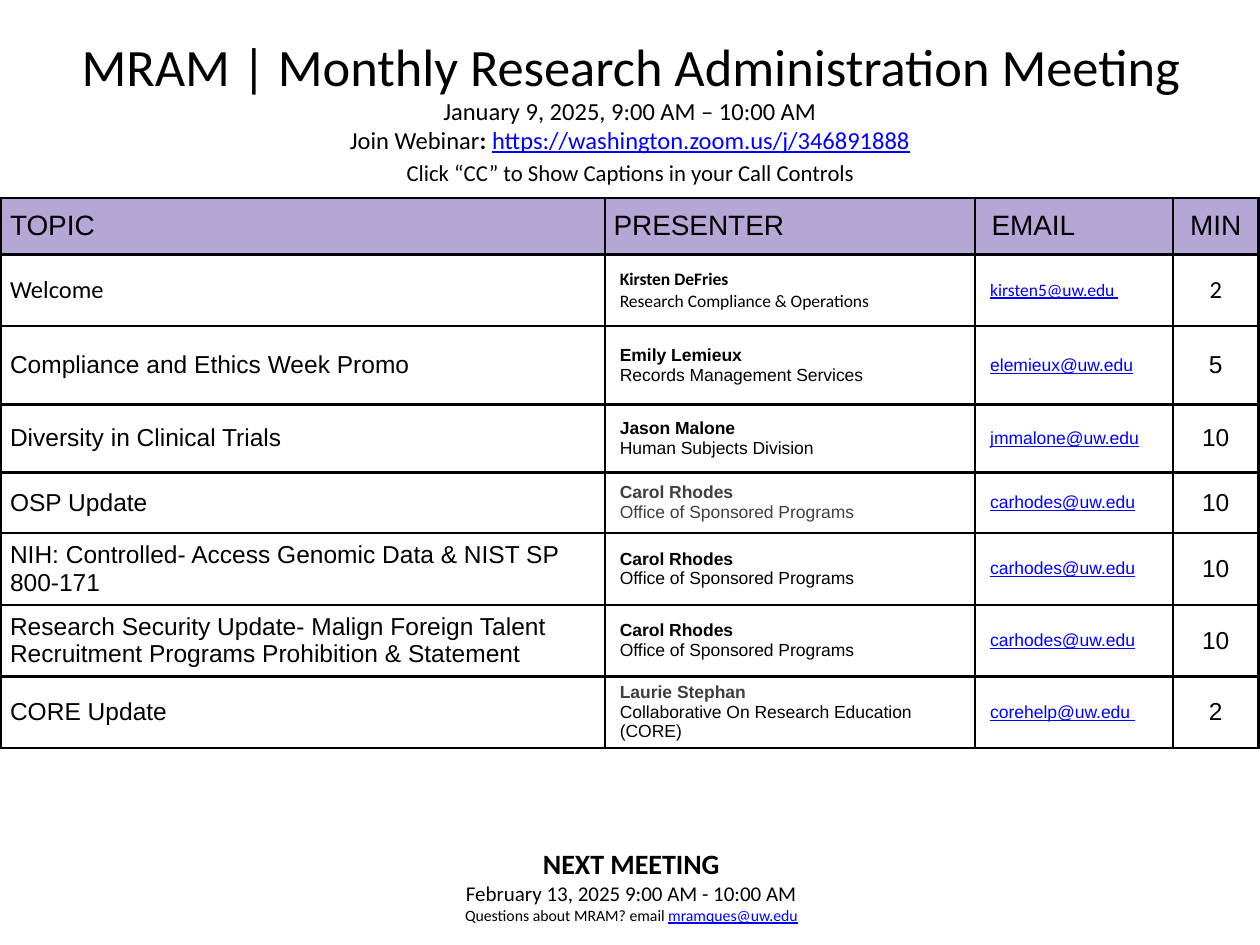
import pptx
import pptx.dml.color
import pptx.enum.text
import pptx.oxml
import pptx.oxml.ns
import pptx.util

Inches = pptx.util.Inches
RGBColor = pptx.dml.color.RGBColor
CENTER = pptx.enum.text.PP_ALIGN.CENTER
MIDDLE = pptx.enum.text.MSO_ANCHOR.MIDDLE

BLACK = RGBColor(0x00, 0x00, 0x00)
GRAY = RGBColor(0x3F, 0x3F, 0x3F)
WHITE = RGBColor(0xFF, 0xFF, 0xFF)
LINK = RGBColor(0x00, 0x00, 0xFF)
LAVENDER = RGBColor(0xB4, 0xA7, 0xD6)

PLAIN, BOLD, URL = "plain", "bold", "url"

# Each line: size, line spacing, runs of (text, look)
TITLE = [(30, None, [("MRAM | Monthly Research Administration Meeting", PLAIN)])]
MEETING = [
    (14, None, [("January 9, 2025, 9:00 AM – 10:00 AM", PLAIN)]),
    (14, None, [("Join Webinar", PLAIN), (": ", BOLD),
                ("https://washington.zoom.us/j/346891888", URL)]),
    (13, 1.15, [("Click “CC” to Show Captions in your Call Controls", PLAIN)]),
]
NEXT_MEETING = [
    (16, None, [("NEXT MEETING", BOLD)]),
    (12, None, [("February 13, 2025 9:00 AM - 10:00 AM", PLAIN)]),
    (9, None, [("Questions about MRAM? email ", PLAIN), ("mramques@uw.edu", URL)]),
]

HEADINGS = ["TOPIC", "PRESENTER", "EMAIL", "MIN"]
OSP = "Office of Sponsored Programs"
# Topic, presenter, office, email, minutes, name colour, office colour, font
AGENDA = [
    ("Welcome", "Kirsten DeFries", "Research Compliance & Operations",
     "kirsten5@uw.edu ", "2", BLACK, BLACK, "Calibri"),
    ("Compliance and Ethics Week Promo", "Emily Lemieux", "Records Management Services",
     "elemieux@uw.edu", "5", BLACK, BLACK, "Arial"),
    ("Diversity in Clinical Trials", "Jason Malone", "Human Subjects Division",
     "jmmalone@uw.edu", "10", BLACK, BLACK, "Arial"),
    ("OSP Update", "Carol Rhodes", OSP, "carhodes@uw.edu", "10", GRAY, GRAY, "Arial"),
    ("NIH: Controlled- Access Genomic Data & NIST SP 800-171", "Carol Rhodes", OSP,
     "carhodes@uw.edu", "10", BLACK, BLACK, "Arial"),
    ("Research Security Update- Malign Foreign Talent Recruitment Programs "
     "Prohibition & Statement", "Carol Rhodes", OSP,
     "carhodes@uw.edu", "10", BLACK, BLACK, "Arial"),
    ("CORE Update", "Laurie Stephan", "Collaborative On Research Education (CORE)",
     "corehelp@uw.edu ", "2", GRAY, BLACK, "Arial"),
]
COLUMN_WIDTHS = [4.79, 2.94, 1.57, 0.68]
ROW_HEIGHTS = [0.45, 0.57, 0.62, 0.54, 0.48, 0.57, 0.57, 0.57]
HEADING_INSETS = [0.07, 0.07, 0.13, 0.07]
AGENDA_INSETS = [0.07, 0.12, 0.12, 0.07]


def style(run, size, face, color=BLACK, bold=False, underline=False):
    run.font.size = pptx.util.Pt(size)
    run.font.name = face
    run.font.color.rgb = color
    run.font.bold = bold
    run.font.underline = underline


def add_centered_text(slide, left, top, width, height, lines, anchor=None):
    frame = slide.shapes.add_textbox(*map(Inches, (left, top, width, height))).text_frame
    frame.word_wrap = True
    frame.margin_left = frame.margin_right = Inches(0.1)
    frame.margin_top = frame.margin_bottom = Inches(0.1)
    if anchor is not None:
        frame.vertical_anchor = anchor
    for index, (size, spacing, pieces) in enumerate(lines):
        paragraph = frame.add_paragraph() if index else frame.paragraphs[0]
        paragraph.alignment = CENTER
        if spacing:
            paragraph.line_spacing = spacing
        for text, look in pieces:
            run = paragraph.add_run()
            run.text = text
            style(run, size, "Calibri", LINK if look == URL else BLACK,
                  look == BOLD, look == URL)


def draw_borders(cell):
    properties = cell._tc.get_or_add_tcPr()
    for index, side in enumerate(("lnL", "lnR", "lnT", "lnB")):
        properties.insert(index, pptx.oxml.parse_xml(
            f'<a:{side} {pptx.oxml.ns.nsdecls("a")} w="19050"><a:solidFill>'
            f'<a:srgbClr val="{BLACK}"/></a:solidFill></a:{side}>'))


def fill_cell(cell, lines, inset, fill, centered=False):
    """Write lines of (text, style settings) into a bordered cell."""
    cell.vertical_anchor = MIDDLE
    cell.margin_left, cell.margin_right = Inches(inset), Inches(min(inset, 0.12))
    if centered:
        cell.margin_left = cell.margin_right = Inches(0.07)
    cell.margin_top = cell.margin_bottom = 0
    cell.fill.solid()
    cell.fill.fore_color.rgb = fill
    cell.text_frame.text = "\n".join(text for text, _ in lines)
    for paragraph, (_, look) in zip(cell.text_frame.paragraphs, lines):
        if centered:
            paragraph.alignment = CENTER
        style(paragraph.runs[0], **look)
    draw_borders(cell)


def add_agenda(slide):
    table = slide.shapes.add_table(
        len(ROW_HEIGHTS), len(COLUMN_WIDTHS), Inches(0.01), Inches(1.57),
        Inches(sum(COLUMN_WIDTHS)), Inches(sum(ROW_HEIGHTS))).table
    table.first_row = table.horz_banding = False
    for column, width in zip(table.columns, COLUMN_WIDTHS):
        column.width = Inches(width)
    for row, height in zip(table.rows, ROW_HEIGHTS):
        row.height = Inches(height)

    last = len(HEADINGS) - 1
    for column, heading in enumerate(HEADINGS):
        fill_cell(table.cell(0, column), [(heading, dict(size=16, face="Arial"))],
                  HEADING_INSETS[column], LAVENDER, column == last)
    for row, item in enumerate(AGENDA, start=1):
        topic, presenter, office, email, minutes, name_color, office_color, face = item
        large, small = dict(size=14, face=face), dict(size=10, face=face)
        columns = [
            [(topic, large)],
            [(presenter, dict(small, color=name_color, bold=True)),
             (office, dict(small, color=office_color))],
            [(email, dict(small, color=LINK, underline=True))],
            [(minutes, large)],
        ]
        for column, lines in enumerate(columns):
            fill_cell(table.cell(row, column), lines, AGENDA_INSETS[column],
                      WHITE, column == last)


def main():
    deck = pptx.Presentation()
    deck.slide_width, deck.slide_height = Inches(10), Inches(7.5)
    slide = deck.slides.add_slide(deck.slide_layouts[6])
    add_centered_text(slide, 0.02, 0.11, 9.98, 0.82, TITLE, MIDDLE)
    add_centered_text(slide, 0, 0.66, 10, 1, MEETING)
    add_agenda(slide)
    add_centered_text(slide, 0.02, 6.62, 9.98, 1.23, NEXT_MEETING)
    deck.save("out.pptx")


if __name__ == "__main__":
    main()
